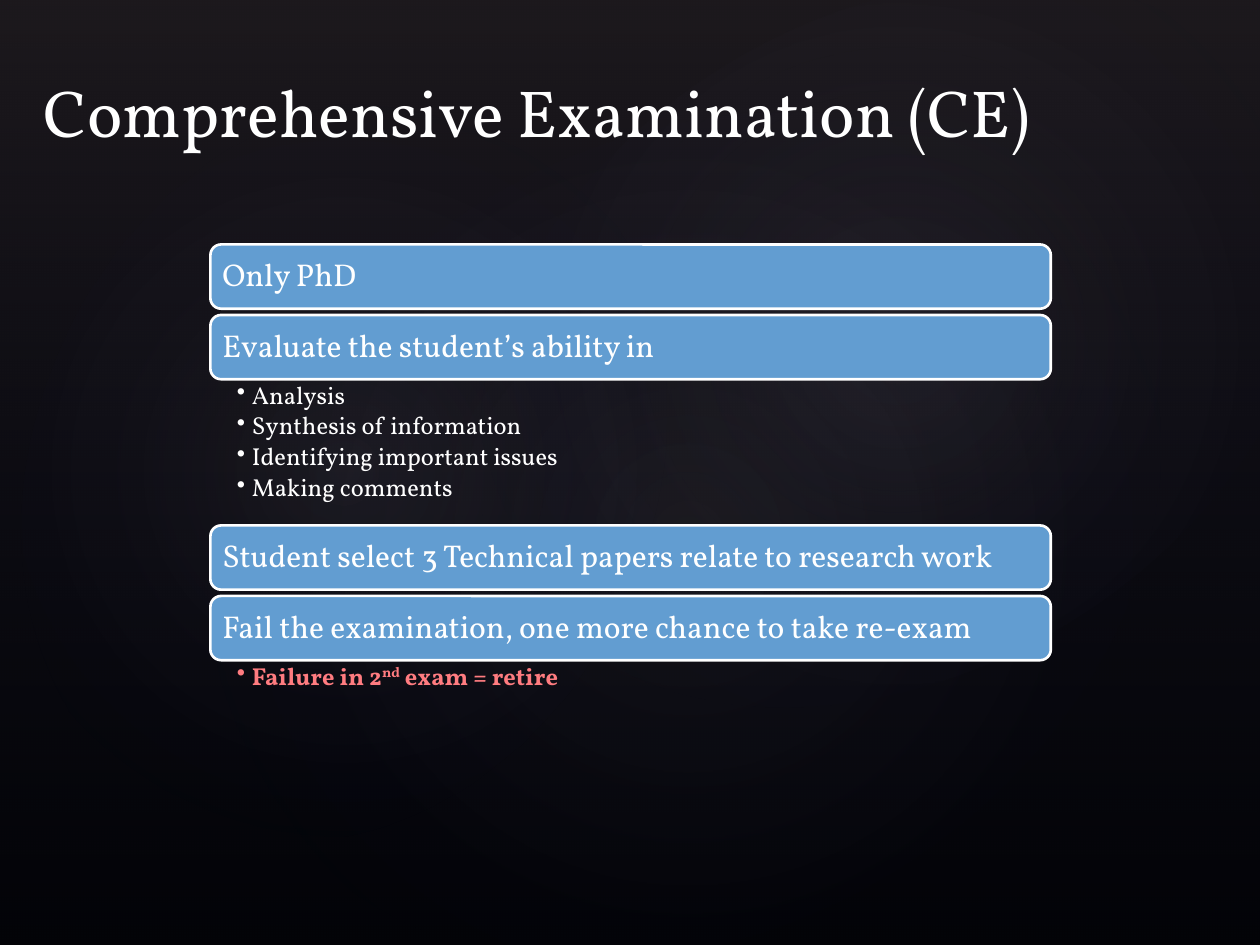
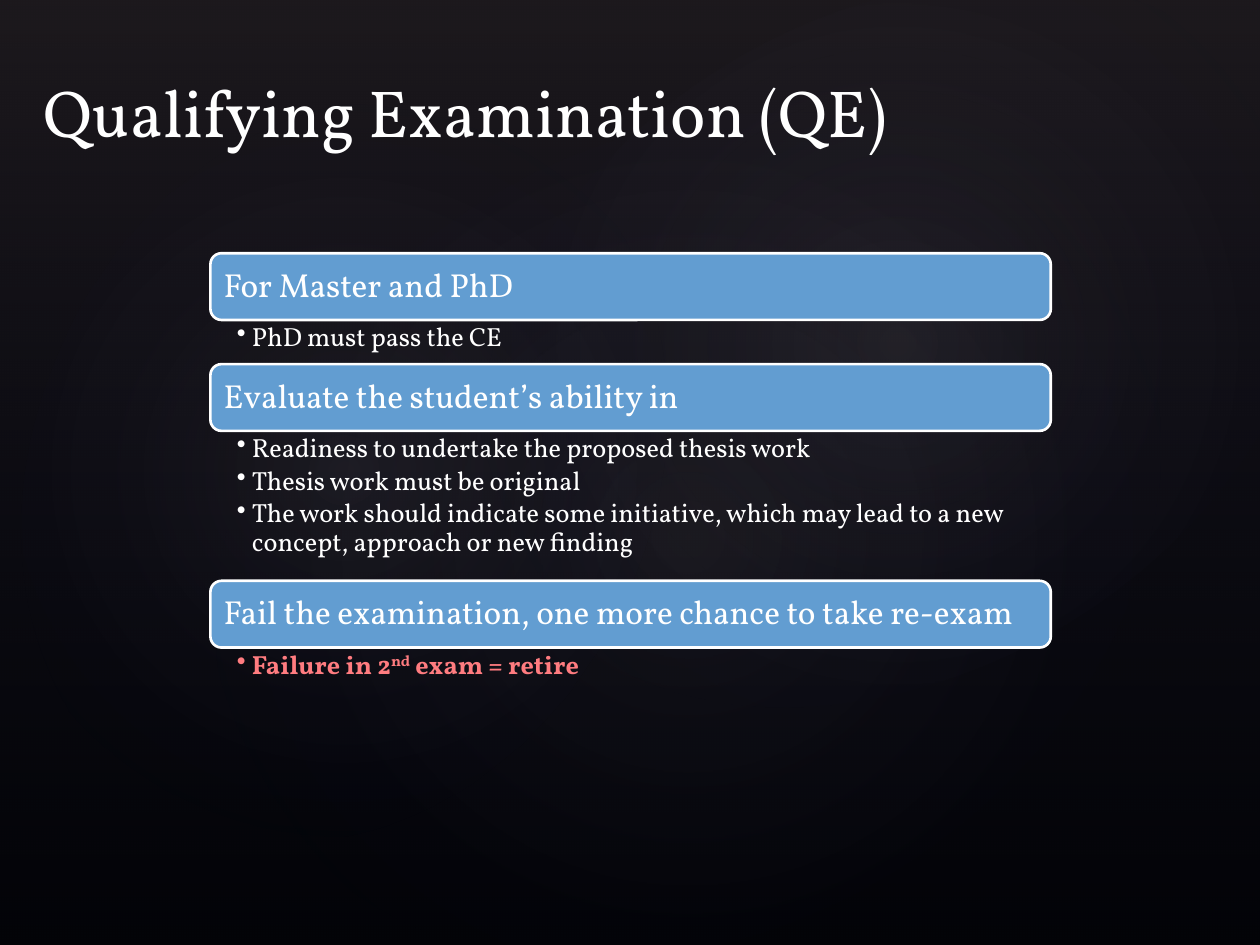
from dataclasses import dataclass

from lxml import etree
from pptx import Presentation
from pptx.dml.color import RGBColor
from pptx.enum.shapes import MSO_SHAPE
from pptx.enum.text import MSO_ANCHOR, PP_ALIGN
from pptx.oxml.ns import nsdecls, qn
from pptx.oxml import parse_xml
from pptx.util import Inches, Pt

RECTANGLE, ELLIPSE = MSO_SHAPE.RECTANGLE, MSO_SHAPE.OVAL
ROUNDED = MSO_SHAPE.ROUNDED_RECTANGLE
MIDDLE, BOTTOM, TOP = MSO_ANCHOR.MIDDLE, MSO_ANCHOR.BOTTOM, MSO_ANCHOR.TOP
LEFT = PP_ALIGN.LEFT


@dataclass(frozen=True)
class Theme:
    font: str = "Vollkorn"
    back: str = "000000"
    text: str = "FFFFFF"
    bar: str = "629DD1"
    warning: str = "FF7C80"
    veil: str = "504652"
    glow: str = "C4BCC6"
    fade: str = "242852"
    title_size: int = 38
    outline: float = 1.5
    line_spacing: float = 0.9


@dataclass(frozen=True)
class Scale:
    """Type sizes (points) and bar measures (inches) of one outline."""
    bar_size: int
    point_size: int
    bar_height: float
    inset: float


THEME = Theme()
LARGE = Scale(bar_size=19, point_size=15, bar_height=0.53, inset=0.08)
MEDIUM = Scale(bar_size=18, point_size=14, bar_height=0.51, inset=0.07)

PAGE_BOX = (0, 0, 10, 7.5)
TITLE_BOX = (0.25, 0.25, 9.58, 1)
OUTLINE_LEFT, OUTLINE_WIDTH = 1.67, 6.67
BAR_GAP = 0.05
BULLET_INDENT = 0.12

# box, rotation, opacity of the centre in percent
GLOWS = [
    ((1.5, 1.14, 7.92, 6.24), 328.7, 7),
    ((-0.3, 1.28, 6.06, 4.9), 294.3, 8),
    ((3.58, 0.13, 7.09, 5.2), 328.7, 8),
]
LINEAR = '<a:lin ang="5400000" scaled="0"/>'
RADIAL = ('<a:path path="circle"><a:fillToRect l="50000" t="50000" '
          'r="50000" b="50000"/></a:path>')

FAIL_BAR = "Fail the examination, one more chance to take re-exam"
ABILITY_BAR = "Evaluate the student’s ability in"
# Text between carets is raised.
RETIRE = ["Failure in 2^nd^ exam = retire"]

# Each section: bar text, points below it, height of the points, colour
CE_SECTIONS = [
    ("Only PhD", [], 0, THEME.text),
    (ABILITY_BAR,
     ["Analysis", "Synthesis of information",
      "Identifying important issues", "Making comments"], 1.16, THEME.text),
    ("Student select 3 Technical papers relate to research work",
     [], 0, THEME.text),
    (FAIL_BAR, RETIRE, 0.33, THEME.warning),
]
QE_SECTIONS = [
    ("For Master and PhD", ["PhD must pass the CE"], 0.35, THEME.text),
    (ABILITY_BAR,
     ["Readiness to undertake the proposed thesis work",
      "Thesis work must be original",
      "The work should indicate some initiative, which may lead to a new "
      "concept, approach or new finding"], 1.19, THEME.text),
    (FAIL_BAR, RETIRE, 0.35, THEME.warning),
]


def inches(box):
    return [Inches(length) for length in box]


def add_plain_shape(page, kind, box):
    shape = page.shapes.add_shape(kind, *inches(box))
    shape.shadow.inherit = False
    return shape


def set_gradient(shape, stops, direction):
    """Fill with (position, colour, opacity) stops, all in percent."""
    stop_xml = "".join(
        f'<a:gs pos="{position * 1000}"><a:srgbClr val="{colour}">'
        f'<a:alpha val="{opacity * 1000}"/></a:srgbClr></a:gs>'
        for position, colour, opacity in stops)
    shape.line.fill.background()
    shape.fill.background()
    properties = shape._element.spPr
    properties.replace(properties.find(qn("a:noFill")), parse_xml(
        f'<a:gradFill {nsdecls("a")} rotWithShape="1">'
        f'<a:gsLst>{stop_xml}</a:gsLst>{direction}</a:gradFill>'))


def set_frame(shape, anchor, insets):
    frame = shape.text_frame
    frame.word_wrap = True
    frame.vertical_anchor = anchor
    (frame.margin_left, frame.margin_top,
     frame.margin_right, frame.margin_bottom) = inches(insets)
    return frame


def write(para, text, size, colour=THEME.text, bold=False):
    para.alignment = LEFT
    para.font.name = THEME.font
    para.font.size = Pt(size)
    para.font.bold = bold
    para.font.color.rgb = RGBColor.from_string(colour)
    for index, part in enumerate(text.split("^")):
        span = para.add_run()
        span.text = part
        if index % 2:
            span._r.get_or_add_rPr().set("baseline", "30000")


def add_bullet(para):
    properties = para._p.get_or_add_pPr()
    properties.set("marL", str(Inches(BULLET_INDENT)))
    properties.set("indent", str(Inches(-BULLET_INDENT)))
    bullet = etree.Element(qn("a:buChar"), char="•")
    properties.find(qn("a:defRPr")).addprevious(bullet)


def add_backdrop(page):
    page.background.fill.solid()
    page.background.fill.fore_color.rgb = RGBColor.from_string(THEME.back)
    veil = add_plain_shape(page, RECTANGLE, PAGE_BOX)
    set_gradient(veil, [(0, THEME.veil, 36), (100, THEME.fade, 10)], LINEAR)
    for box, rotation, opacity in GLOWS:
        glow = add_plain_shape(page, ELLIPSE, box)
        glow.rotation = rotation
        set_gradient(glow, [(0, THEME.glow, opacity), (58, THEME.fade, 0)],
                     RADIAL)


def add_title(page, text):
    title = page.shapes.add_textbox(*inches(TITLE_BOX))
    frame = set_frame(title, BOTTOM, (0.1, 0.05, 0.1, 0.05))
    write(frame.paragraphs[0], text, THEME.title_size)


def add_bar(page, box, text, scale):
    bar = add_plain_shape(page, ROUNDED, box)
    bar.fill.solid()
    bar.fill.fore_color.rgb = RGBColor.from_string(THEME.bar)
    bar.line.color.rgb = RGBColor.from_string(THEME.text)
    bar.line.width = Pt(THEME.outline)
    para = set_frame(bar, MIDDLE, [scale.inset] * 4).paragraphs[0]
    para.line_spacing = THEME.line_spacing
    write(para, text, scale.bar_size)


def add_points(page, box, points, scale, colour):
    holder = page.shapes.add_textbox(*inches(box))
    frame = set_frame(holder, TOP, (0.21, 0.03, 0.14, 0.03))
    for index, point in enumerate(points):
        para = frame.add_paragraph() if index else frame.paragraphs[0]
        para.level = 1
        para.line_spacing = THEME.line_spacing
        para.space_after = Pt(2.5)
        write(para, point, scale.point_size, colour,
              bold=colour == THEME.warning)
        add_bullet(para)


def add_outline(page, top, sections, scale):
    """Stack bars downwards, each followed by its points or a small gap."""
    for text, points, points_height, colour in sections:
        add_bar(page, (OUTLINE_LEFT, top, OUTLINE_WIDTH, scale.bar_height),
                text, scale)
        top += scale.bar_height
        if points:
            add_points(page, (OUTLINE_LEFT, top, OUTLINE_WIDTH, points_height),
                       points, scale, colour)
        top += points_height or BAR_GAP


def add_exam_page(deck, title, top, sections, scale):
    page = deck.slides.add_slide(deck.slide_layouts[6])
    add_backdrop(page)
    add_title(page, title)
    add_outline(page, top, sections, scale)


def main():
    deck = Presentation()
    deck.slide_width, deck.slide_height = inches(PAGE_BOX[2:])
    add_exam_page(deck, "Comprehensive Examination (CE)", 1.94,
                  CE_SECTIONS, MEDIUM)
    add_exam_page(deck, "Qualifying Examination (QE)", 2.01,
                  QE_SECTIONS, LARGE)
    deck.save("out.pptx")


if __name__ == "__main__":
    main()
